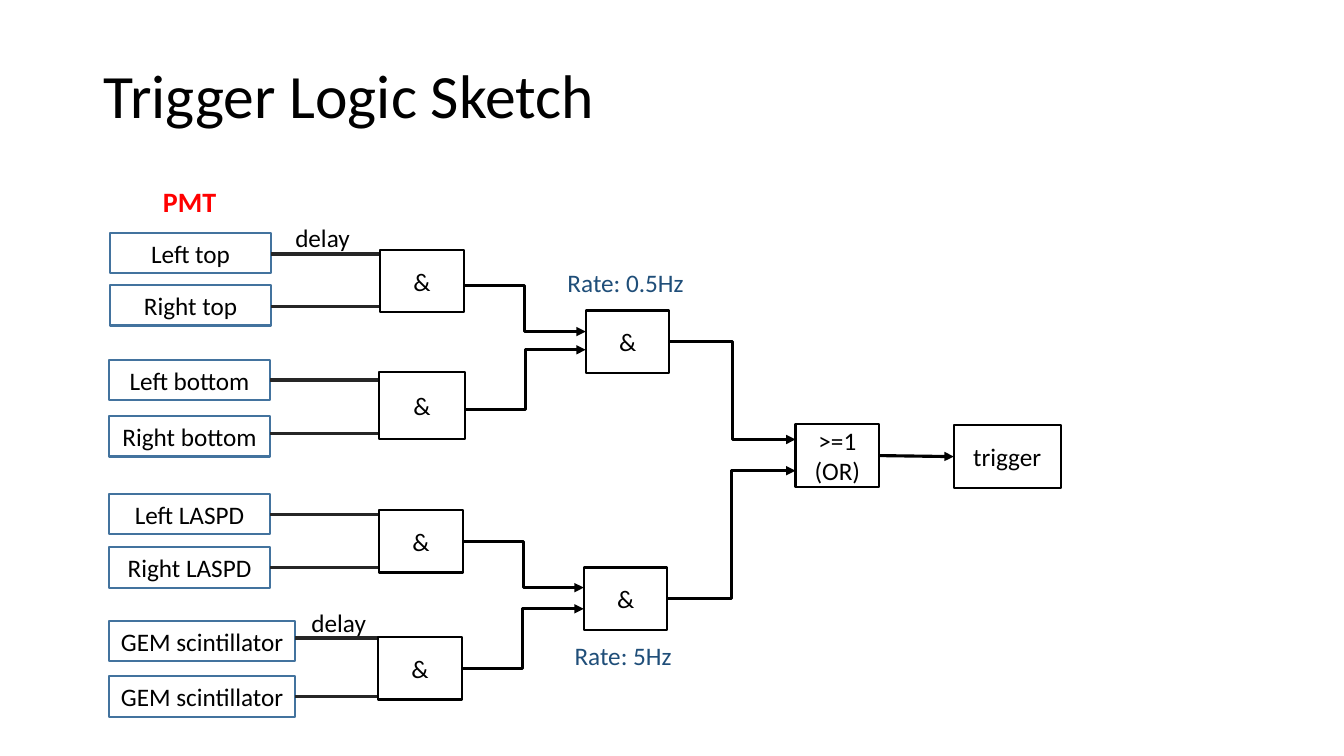
from lxml.etree import SubElement
from pptx import Presentation
from pptx.dml.color import RGBColor
from pptx.enum.shapes import MSO_CONNECTOR, MSO_SHAPE
from pptx.enum.text import MSO_ANCHOR, PP_ALIGN
from pptx.oxml.ns import qn
from pptx.util import Pt

PX = 9144  # 100 px to the inch
GATE_W, GATE_H = 83, 62
SENSOR_H = 40

# x, y, sensor width, names, sensor step, wire offsets, gate (x, dy, w, h), output offset
PAIRS = [
    (109, 231, 160, ("Left top", "Right top"), 52, (21, 73), (377, 17, GATE_W, GATE_H), 52),
    (108, 357, 160, ("Left bottom", "Right bottom"), 56, (20, 73), (376, 12, 85, 67), 49),
    (108, 490, 160, ("Left LASPD", "Right LASPD"), 53, (20, 73), (376, 16, GATE_W, GATE_H), 47),
    (108, 616, 185, ("GEM scintillator", "GEM scintillator"), 55, (17, 75),
     (375, 16, GATE_W, GATE_H), 47),
]
# text, box, colour, size, bold, alignment
LABELS = [
    ("delay", (283, 216, 79, 40), "000000", 18, False, PP_ALIGN.LEFT),
    ("delay", (299, 598, 79, 40), "000000", 18, False, PP_ALIGN.LEFT),
    ("PMT", (107, 178, 162, 44), "FF0000", 20, True, PP_ALIGN.CENTER),
    ("Rate: 0.5Hz", (553, 260, 138, 40), "1F4E79", 18, False, PP_ALIGN.LEFT),
    ("Rate: 5Hz", (560, 630, 138, 40), "1F4E79", 18, False, PP_ALIGN.LEFT),
]


def emu(*lengths):
    return [n * PX for n in lengths]


def rgb(value):
    return RGBColor.from_string(value)


def write(tf, text, size, color="000000", bold=False, align=PP_ALIGN.CENTER):
    tf.word_wrap = True
    tf.text = text
    for p in tf.paragraphs:
        p.alignment = align
        for r in p.runs:
            r.font.name = "Calibri"
            r.font.size = Pt(size)
            r.font.bold = bold
            r.font.color.rgb = rgb(color)


def add_block(s, text, box, line="000000", fill=None):
    sp = s.shapes.add_shape(MSO_SHAPE.RECTANGLE, *emu(*box))
    sp.shadow.inherit = False
    if fill:
        sp.fill.solid()
        sp.fill.fore_color.rgb = rgb(fill)
    else:
        sp.fill.background()
    sp.line.color.rgb = rgb(line)
    sp.line.width = Pt(1.5)
    sp.text_frame.vertical_anchor = MSO_ANCHOR.MIDDLE
    write(sp.text_frame, text, 18)


def add_wire(s, start, end, kind=MSO_CONNECTOR.STRAIGHT, color="000000", arrow=True):
    c = s.shapes.add_connector(kind, *emu(*start, *end))
    c.line.color.rgb = rgb(color)
    c.line.width = Pt(2.25)
    if arrow:
        SubElement(c.line._get_or_add_ln(), qn("a:tailEnd"), type="triangle")
    SubElement(c._element.spPr, qn("a:effectLst"))


def add_title(s, text, box):
    sp = s.shapes.title
    sp.left, sp.top, sp.width, sp.height = emu(*box)
    sp.text_frame.vertical_anchor = MSO_ANCHOR.MIDDLE
    write(sp.text_frame, text, 44, align=PP_ALIGN.LEFT)
    sp.text_frame.paragraphs[0].line_spacing = 0.9


def add_pair(s, x, y, width, names, step, wires, gate, out):
    """Draw two sensors wired to an AND gate; return the gate's output point."""
    gate_x, dy, gate_w, gate_h = gate
    for i, (name, wire) in enumerate(zip(names, wires)):
        add_block(s, name, (x, y + i * step, width, SENSOR_H), "43739E", "FFFFFF")
        add_wire(s, (x + width, y + wire), (gate_x, y + wire), color="262626", arrow=False)
    add_block(s, "&", (gate_x, y + dy, gate_w, gate_h))
    return gate_x + gate_w, y + out


def add_merge(s, text, x, y, sources, inputs):
    """Draw a gate fed by elbow arrows; return its output point."""
    add_block(s, text, (x, y, GATE_W, GATE_H))
    for source, dy in zip(sources, inputs):
        add_wire(s, source, (x, y + dy), MSO_CONNECTOR.ELBOW)
    return x + GATE_W, y + GATE_H // 2


def add_label(s, text, box, color, size, bold, align):
    sp = s.shapes.add_textbox(*emu(*box))
    write(sp.text_frame, text, size, color, bold, align)


def main():
    prs = Presentation()
    prs.slide_width, prs.slide_height = emu(1333, 750)
    s = prs.slides.add_slide(prs.slide_layouts[5])
    add_title(s, "Trigger Logic Sketch", (93, 25, 1150, 145))

    outputs = [add_pair(s, *pair) for pair in PAIRS]
    upper = add_merge(s, "&", 581, 308, outputs[:2], (21, 39))
    lower = add_merge(s, "&", 579, 563, outputs[2:], (20, 41))
    x, y = add_merge(s, ">=1\n(OR)", 789, 421, (upper, lower), (15, 46))
    add_wire(s, (x, y), (946, y + 1))
    add_block(s, "trigger", (946, 422, 106, GATE_H))

    for label in LABELS:
        add_label(s, *label)
    prs.save("out.pptx")


if __name__ == "__main__":
    main()
